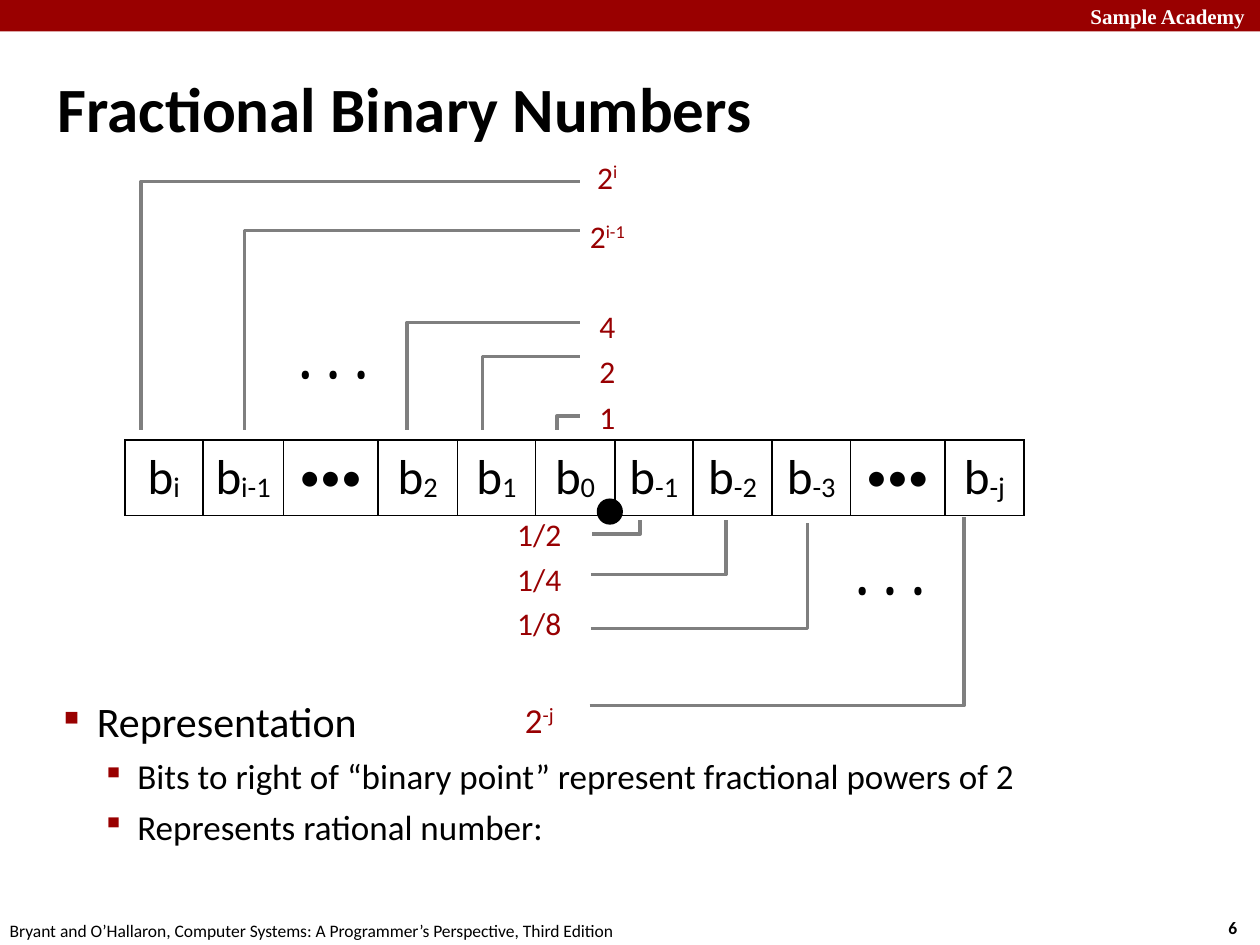
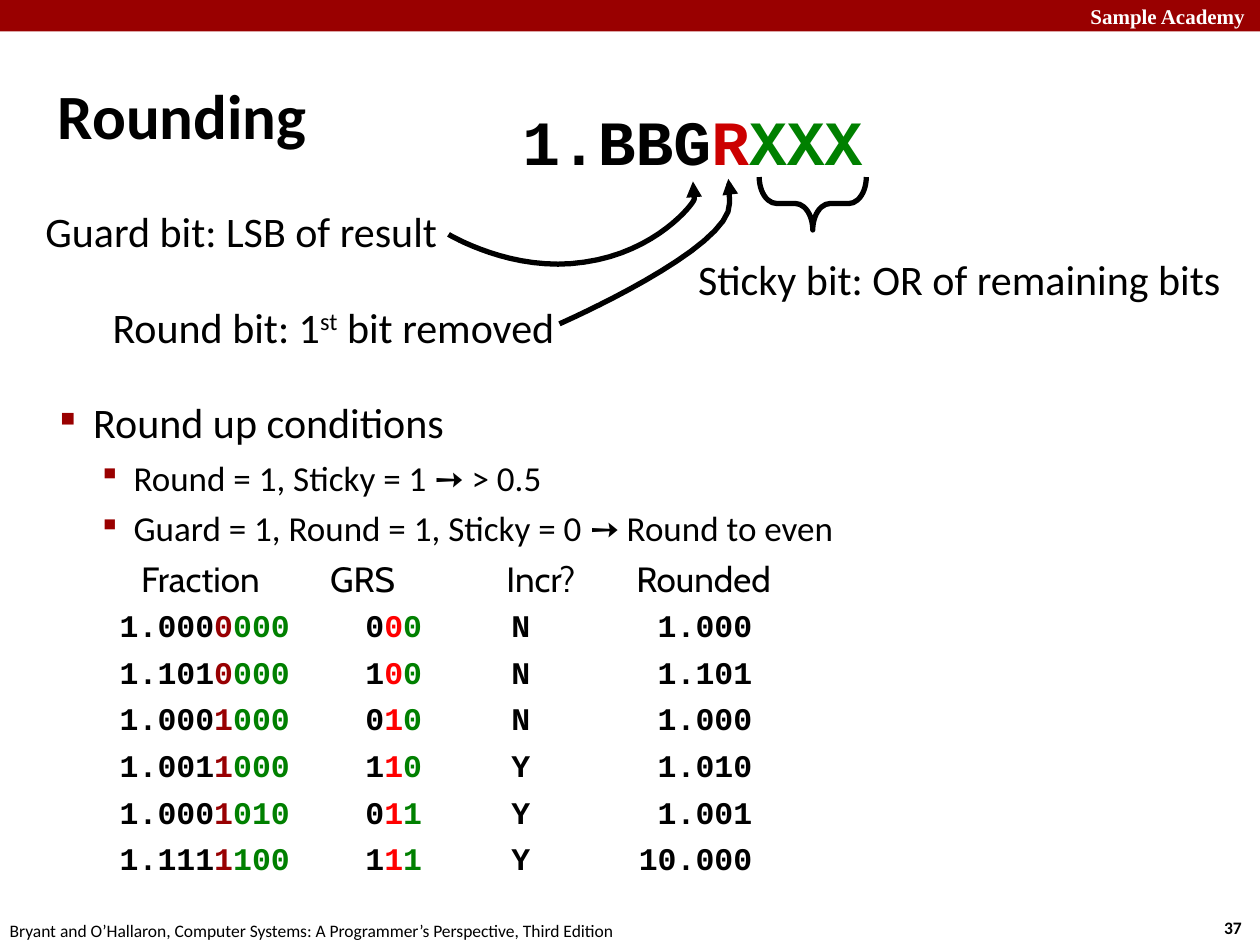
from lxml import etree
from pptx import Presentation
from pptx.dml.color import RGBColor
from pptx.enum.shapes import MSO_SHAPE
from pptx.enum.text import MSO_ANCHOR, PP_ALIGN
from pptx.oxml.ns import qn
from pptx.util import Inches, Pt

# Shared look
BLACK, WHITE, BAND, GRAY = "000000", "FFFFFF", "990000", "7F7F7F"
DARK_RED, RED, BRIGHT_RED, GREEN = "980002", "CC0000", "FF0000", "008000"
SANS, MONO = "Calibri", "Courier New"
LEFT, CENTER, RIGHT = PP_ALIGN.LEFT, PP_ALIGN.CENTER, PP_ALIGN.RIGHT
SCHOOL = "Sample Academy"
BOOK = "Bryant and O’Hallaron, Computer Systems: A Programmer’s Perspective, Third Edition"
# Per outline level: size, text indent, hanging, space before, bullet, bullet percent
LEVELS = [(24, 0.26, 0.26, 0, "■", 48), (20, 0.58, 0.28, 5, "▪", 88)]

# Fractional binary numbers: (base, raised or lowered part)
BITS = [("b", "i"), ("b", "i-1"), ("•••", ""), ("b", "2"), ("b", "1"), ("b", "0"),
        ("b", "-1"), ("b", "-2"), ("b", "-3"), ("•••", ""), ("b", "-j")]
BIT_WIDTHS = [0.62, 0.64, 0.75, 0.63, 0.62, 0.63, 0.62, 0.63, 0.62, 0.75, 0.63]
WHOLE_WEIGHTS = [("2", "i"), ("2", "i-1"), None, ("4", ""), ("2", ""), ("1", "")]
WHOLE_HEIGHTS = [0.47, 0.47, 0.29, 0.36, 0.36, 0.36]
PART_WEIGHTS = [("1/2", ""), ("1/4", ""), ("1/8", ""), None, ("2", "-j")]
PART_HEIGHTS = [0.35, 0.35, 0.35, 0.22, 0.59]
# Leader lines: label x, label y, bit x, bit y
LEADERS = [(4.6, 3.3, 4.42, 3.41), (4.6, 2.83, 3.83, 3.41), (4.6, 2.56, 3.23, 3.41),
           (4.6, 1.83, 1.94, 3.41), (4.6, 1.44, 1.12, 3.41),
           (4.7, 4.24, 5.08, 4.13), (4.69, 4.56, 5.76, 4.13),
           (4.69, 4.99, 6.41, 4.15), (4.68, 5.6, 7.65, 4.1)]
ELLIPSES = [(2.31, 2.65, 0), (6.79, 4.44, 180)]
REPRESENTATION = [
    (0, "Representation"),
    (1, "Bits to right of “binary point” represent fractional powers of 2"),
    (1, "Represents rational number:"),
]

# Rounding
CONDITIONS = [
    (0, "Round up conditions"),
    (1, "Round = 1, Sticky = 1 ➙ > 0.5"),
    (1, "Guard = 1, Round = 1, Sticky = 0 ➙ Round to even"),
]
# Column: heading, width, heading indent, value indent, value alignment
COLUMNS = [("Fraction", 1.67, 0.17, 0, LEFT), ("GRS", 1.4, 0, 0.28, LEFT),
           ("Incr?", 1.03, 0, 0.04, LEFT), ("Rounded", 1.2, 0, 0.28, RIGHT)]
# Row: kept digits, round digit, remaining digits, GRS, increment, rounded
ROUNDINGS = [("1.000", "0", "000", "000", "N", "1.000"),
             ("1.101", "0", "000", "100", "N", "1.101"),
             ("1.000", "1", "000", "010", "N", "1.000"),
             ("1.001", "1", "000", "110", "Y", "1.010"),
             ("1.000", "1", "010", "011", "Y", "1.001"),
             ("1.111", "1", "100", "111", "Y", "10.000")]
# Arrow: start point, then Bézier segments of two controls and an end
ARROWS = [
    ((4.44, 2.57), [((4.44, 2.57), (5.81, 1.97), (5.79, 1.61)),
                    ((5.78, 1.25), (5.78, 1.42), (5.78, 1.42))]),
    ((3.56, 1.86), [((3.56, 1.86), (4.07, 2.17), (4.64, 2.08)),
                    ((5.21, 2), (5.51, 1.61), (5.51, 1.58)),
                    ((5.51, 1.56), (5.5, 1.44), (5.5, 1.44))]),
]


def rgb(color):
    return RGBColor.from_string(color)


def write(paragraph, runs, size, font=SANS, color=BLACK, bold=False, align=LEFT):
    """Fill a paragraph; a run is a string or (text, colour, baseline percent)."""
    paragraph.alignment = align
    paragraph.font.name, paragraph.font.size = font, Pt(size)
    paragraph.font.bold = bold
    paragraph.font.color.rgb = rgb(color)
    for part in [runs] if isinstance(runs, str) else runs:
        text, run_color, baseline = (part, None, 0) if isinstance(part, str) else part
        run = paragraph.add_run()
        run.text = text
        if run_color:
            run.font.color.rgb = rgb(run_color)
        if baseline:
            run._r.get_or_add_rPr().set("baseline", str(baseline * 1000))


def set_margins(target, horizontal, vertical):
    target.margin_left = target.margin_right = Inches(horizontal)
    target.margin_top = target.margin_bottom = Inches(vertical)


def add_text(slide, box, runs, size, margins=(0.04, 0.04), wrap=False,
             anchor=MSO_ANCHOR.TOP, **style):
    frame = slide.shapes.add_textbox(*map(Inches, box)).text_frame
    frame.word_wrap, frame.vertical_anchor = wrap, anchor
    set_margins(frame, *margins)
    write(frame.paragraphs[0], runs, size, **style)


def add_shape(slide, kind, box, fill=None, line=None, weight=2):
    shape = slide.shapes.add_shape(kind, *map(Inches, box))
    paint(shape, fill, line, weight)
    return shape


def paint(shape, fill, line, weight):
    shape.shadow.inherit = False
    if fill:
        shape.fill.solid()
        shape.fill.fore_color.rgb = rgb(fill)
    else:
        shape.fill.background()
    if line:
        shape.line.color.rgb = rgb(line)
        shape.line.width = Pt(weight)
    else:
        shape.line.fill.background()


def add_path(slide, points, color, weight):
    points = [(Inches(x), Inches(y)) for x, y in points]
    builder = slide.shapes.build_freeform(*points[0], scale=1)
    builder.add_line_segments(points[1:], close=False)
    shape = builder.convert_to_shape()
    paint(shape, None, color, weight)
    return shape


def curve_points(start, segments, steps=16):
    points = [start]
    for first, second, end in segments:
        for step in range(1, steps + 1):
            t = step / steps
            u = 1 - t
            points.append(tuple(
                u**3 * a + 3 * u * u * t * b + 3 * u * t * t * c + t**3 * d
                for a, b, c, d in zip(start, first, second, end)))
        start = end
    return points


def add_grid(slide, left, top, widths, heights, margin=0, border=WHITE):
    box = map(Inches, (left, top, sum(widths), sum(heights)))
    table = slide.shapes.add_table(len(heights), len(widths), *box).table
    table.first_row = table.horz_banding = False
    for column, width in zip(table.columns, widths):
        column.width = Inches(width)
    for row, height in zip(table.rows, heights):
        row.height = Inches(height)
    for cell in table.iter_cells():
        set_margins(cell, margin, margin)
        cell.vertical_anchor = MSO_ANCHOR.MIDDLE
        properties = cell._tc.get_or_add_tcPr()
        for side in ("lnL", "lnR", "lnT", "lnB"):
            edge = etree.SubElement(properties, qn(f"a:{side}"), w=str(Pt(1)))
            solid = etree.SubElement(edge, qn("a:solidFill"))
            etree.SubElement(solid, qn("a:srgbClr"), val=border)
        cell.fill.background()
    return table


def add_outline(slide, box, items):
    frame = slide.shapes.add_textbox(*map(Inches, box)).text_frame
    frame.word_wrap = True
    set_margins(frame, 0.04, 0.04)
    for index, (level, text) in enumerate(items):
        paragraph = frame.add_paragraph() if index else frame.paragraphs[0]
        size, indent, hanging, before, bullet, percent = LEVELS[level]
        write(paragraph, text, size)
        paragraph.level = level
        paragraph.space_before = Pt(before)
        properties = paragraph._p.get_or_add_pPr()
        properties.set("marL", str(Inches(indent)))
        properties.set("indent", str(-Inches(hanging)))
        # Bullet elements stand before the default run properties
        color = etree.Element(qn("a:buClr"))
        etree.SubElement(color, qn("a:srgbClr"), val=BAND)
        scale = etree.Element(qn("a:buSzPct"), val=str(percent * 1000))
        symbol = etree.Element(qn("a:buChar"), char=bullet)
        defaults = properties.find(qn("a:defRPr"))
        for element in (color, scale, symbol):
            defaults.addprevious(element)


def add_page(presentation, title, title_box, number):
    """Start a slide with the band, title, footer and page number."""
    slide = presentation.slides.add_slide(presentation.slide_layouts[6])
    usual = (0.1, 0.05)
    add_text(slide, (9.6, 7.23, 0.37, 0.27), number, 10, usual, bold=True, align=CENTER)
    add_text(slide, (-0.07, 7.25, 5.08, 0.27), BOOK, 10, usual, align=CENTER)
    add_shape(slide, MSO_SHAPE.RECTANGLE, (0, 0, 10, 0.25), BAND)
    add_text(slide, (7.98, -0.02, 2, 0.3), SCHOOL, 12, usual,
             font="Times New Roman", color=WHITE, bold=True, align=RIGHT)
    add_text(slide, title_box, title, 36, wrap=True, anchor=MSO_ANCHOR.MIDDLE, bold=True)
    return slide


def add_weights(slide, left, top, width, heights, weights):
    table = add_grid(slide, left, top, [width], heights)
    for row, weight in enumerate(weights):
        if weight:
            base, power = weight
            runs = [base] + ([(power, None, 32)] if power else [])
            size = 20 if power == "-j" else 18
            write(table.cell(row, 0).text_frame.paragraphs[0], runs, size,
                  color=DARK_RED, align=CENTER)


def build_fractions(presentation):
    slide = add_page(presentation, "Fractional Binary Numbers", (0.42, 0, 7.51, 1.7), "6")
    add_weights(slide, 4.5, 1.18, 0.64, WHOLE_HEIGHTS, WHOLE_WEIGHTS)
    add_weights(slide, 3.92, 4.08, 0.72, PART_HEIGHTS, PART_WEIGHTS)

    # Row of bits
    table = add_grid(slide, 0.99, 3.49, BIT_WIDTHS, [0.6], 0.06, BLACK)
    for cell, (base, index) in zip(table.iter_cells(), BITS):
        runs = [base] + ([(index, None, -6)] if index else [])
        write(cell.text_frame.paragraphs[0], runs, 28 if index else 24, align=CENTER)

    # Dots between the leader lines
    for left, top, rotation in ELLIPSES:
        shape = add_shape(slide, MSO_SHAPE.RECTANGLE, (left, top, 0.61, 0.58), WHITE)
        shape.rotation = rotation
        frame = shape.text_frame
        frame.word_wrap, frame.vertical_anchor = False, MSO_ANCHOR.MIDDLE
        set_margins(frame, 0.04, 0.04)
        write(frame.paragraphs[0], "• • •", 24, font="Cambria")

    add_outline(slide, (0.47, 5.48, 9.27, 2.02), REPRESENTATION)
    for label_x, label_y, bit_x, bit_y in LEADERS:
        corner = (bit_x, label_y)
        add_path(slide, [(label_x, label_y), corner, (bit_x, bit_y)], GRAY, 2)

    # Binary point
    add_shape(slide, MSO_SHAPE.OVAL, (4.75, 3.97, 0.18, 0.18), BLACK, BLACK)


def build_rounding(presentation):
    slide = add_page(presentation, "Rounding", (0.42, 0.28, 9.17, 1.25), "37")
    add_outline(slide, (0.44, 3.11, 9.17, 1.3), CONDITIONS)

    # Rounding examples
    heights = [0.41] + [0.37] * len(ROUNDINGS)
    widths = [column[1] for column in COLUMNS]
    table = add_grid(slide, 0.95, 4.4, widths, heights)
    rows = [[column[0] for column in COLUMNS]]
    for kept, rounded_off, rest, (guard, round_bit, sticky), increment, result in ROUNDINGS:
        rows.append([[kept, (rounded_off, DARK_RED, 0), (rest, GREEN, 0)],
                     [guard, (round_bit, BRIGHT_RED, 0), (sticky, GREEN, 0)],
                     increment, result])
    for row, values in enumerate(rows):
        for column, value in enumerate(values):
            cell = table.cell(row, column)
            heading_indent, value_indent, align = COLUMNS[column][2:]
            paragraph = cell.text_frame.paragraphs[0]
            if row == 0:
                cell.margin_left = Inches(heading_indent)
                write(paragraph, value, 20, font="Cabin")
                continue
            if align == RIGHT:
                cell.margin_right = Inches(value_indent)
            else:
                cell.margin_left = Inches(value_indent)
            write(paragraph, value, 18, font=MONO, bold=True, align=align)

    # Bit pattern and its labels
    add_text(slide, (4.09, 0.77, 2.81, 0.69), ["1.BBG", ("R", RED, 0), ("XXX", GREEN, 0)],
             36, font=MONO, bold=True, align=CENTER)
    add_text(slide, (0.16, 1.59, 3.35, 0.49), "Guard bit: LSB of result", 24,
             wrap=True, align=RIGHT)
    add_text(slide, (0.73, 2.35, 3.71, 0.49),
             ["Round bit: 1", ("st", None, 30), " bit removed"], 24, align=RIGHT)
    add_text(slide, (5.5, 1.97, 4.36, 0.49), "Sticky bit: OR of remaining bits", 24)

    # Brace under the sticky bits
    brace = add_shape(slide, MSO_SHAPE.RIGHT_BRACE, (6.24, 1.19, 0.42, 0.85),
                      line=BLACK, weight=3)
    brace.rotation = 90
    brace.adjustments[0] = 0.33

    # Curved arrows to the guard and round bits
    for start, segments in ARROWS:
        arrow = add_path(slide, curve_points(start, segments), BLACK, 3)
        etree.SubElement(arrow.line._get_or_add_ln(), qn("a:tailEnd"), type="triangle")


def main():
    presentation = Presentation()
    presentation.slide_width, presentation.slide_height = Inches(10), Inches(7.5)
    build_fractions(presentation)
    build_rounding(presentation)
    presentation.save("out.pptx")


if __name__ == "__main__":
    main()
